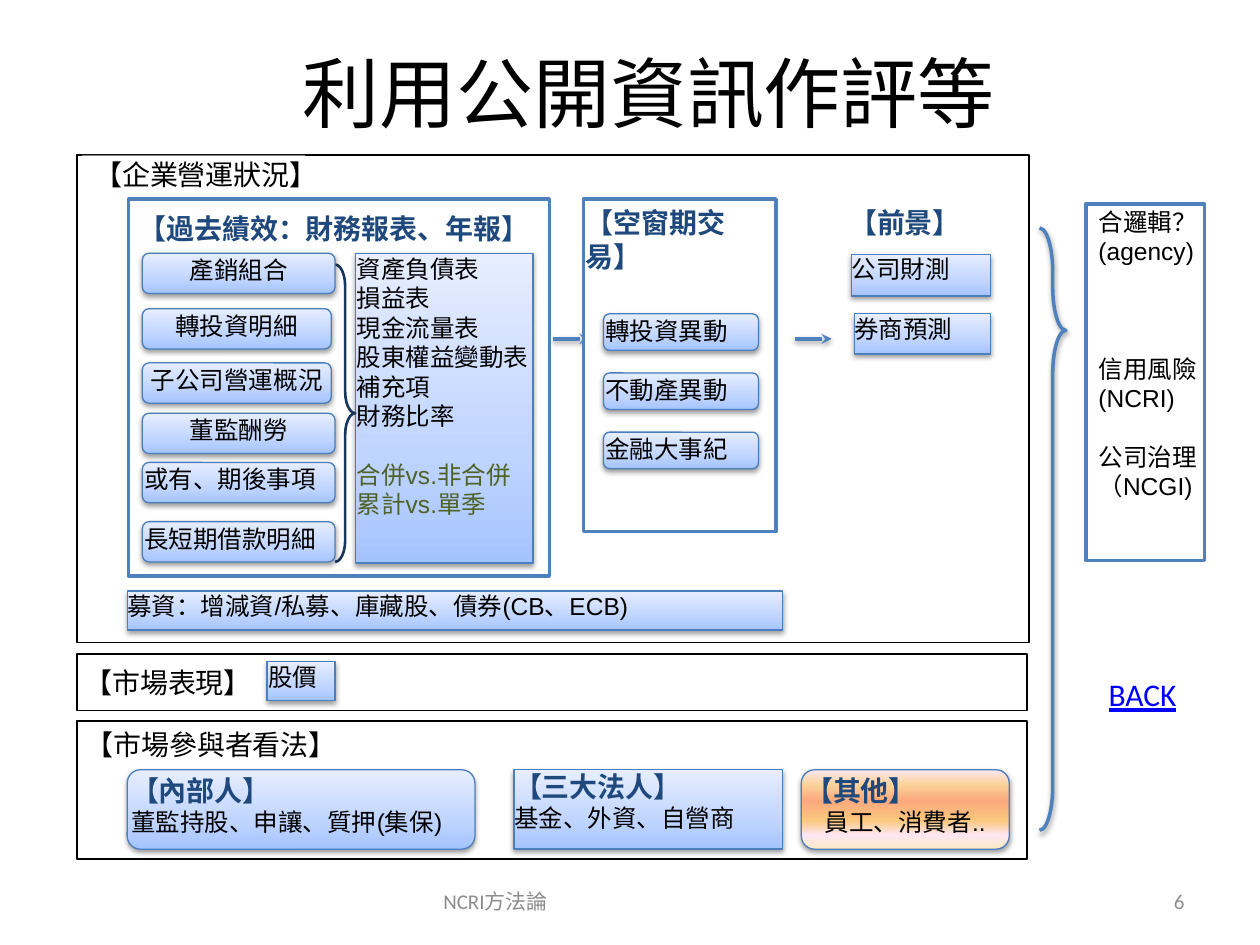
from dataclasses import dataclass

from lxml.etree import SubElement
from pptx import Presentation
from pptx.dml.color import RGBColor
from pptx.enum.shapes import MSO_CONNECTOR, MSO_SHAPE
from pptx.enum.text import MSO_ANCHOR, PP_ALIGN
from pptx.oxml.ns import qn
from pptx.util import Inches, Pt


@dataclass(frozen=True)
class Theme:
    """Colours, fonts and type sizes of the slide."""
    body_font: str = "Arial"
    heading_font: str = "Calibri"
    black: str = "000000"
    white: str = "FFFFFF"
    gray: str = "8C8C8C"
    navy: str = "1F497D"
    brace: str = "17375E"
    green: str = "4F6228"
    link: str = "0000FF"
    accent: str = "4F81BD"
    edge: str = "4B7EBC"
    blue_stops: tuple = ((0, "A4C4FF"), (35, "BFD4FF"), (100, "E6EEFF"))
    warm_stops: tuple = ((0, "FBEAC7"), (18, "FEE7F2"), (36, "FAC77D"),
                         (61, "FBA97D"), (82, "FBD49C"), (100, "FEE7F2"))
    title: int = 44
    back: int = 18
    label: int = 16
    body: int = 14
    footer: int = 12
    blank: float = 16.8


THEME = Theme()


@dataclass(frozen=True)
class Box:
    """A rectangle in inches."""
    left: float
    top: float
    width: float
    height: float

    def inside(self, left, top, width, height):
        """Return a box offset from this one's corner."""
        return Box(self.left + left, self.top + top, width, height)

    def lengths(self):
        """Return the four lengths for python-pptx."""
        return [Inches(v) for v in (self.left, self.top, self.width, self.height)]


@dataclass(frozen=True)
class Line:
    """One paragraph of text and its format."""
    text: str
    size: float = THEME.body
    color: str = THEME.black
    bold: bool = False
    align: PP_ALIGN = PP_ALIGN.LEFT
    before: float = 0
    font: str = THEME.body_font
    underline: bool = False


def heading(text):
    """Return a bold navy heading line."""
    return Line(text, THEME.label, THEME.navy, True)


def write(shape, lines, inset=0.0, anchor=MSO_ANCHOR.TOP, wrap=True):
    """Fill a shape with formatted paragraphs."""
    frame = shape.text_frame
    frame.word_wrap = wrap
    frame.vertical_anchor = anchor
    frame.margin_left = frame.margin_right = Inches(inset)
    frame.margin_top = frame.margin_bottom = Inches(inset / 2)
    for index, line in enumerate(lines):
        para = frame.add_paragraph() if index else frame.paragraphs[0]
        para.text = line.text
        para.alignment = line.align
        if line.before:
            para.space_before = Pt(line.before)
        font = para.font
        font.name, font.size, font.bold = line.font, Pt(line.size), line.bold
        font.color.rgb = RGBColor.from_string(line.color)
        if line.underline:
            font.underline = True


def add_text(page, box, lines, inset=0.01, anchor=MSO_ANCHOR.TOP):
    """Add a plain text box."""
    write(page.shapes.add_textbox(*box.lengths()), lines, inset, anchor)


def set_line(shape, color, width):
    """Set the outline of a shape or connector."""
    shape.line.color.rgb = RGBColor.from_string(color)
    shape.line.width = Pt(width)


def cast_shadow(effects):
    """Put a soft downward shadow in an effect list."""
    shadow = SubElement(effects, qn("a:outerShdw"), blurRad=str(Pt(3.1)),
                        dist=str(Pt(1.6)), dir="5400000", rotWithShape="0")
    color = SubElement(shadow, qn("a:srgbClr"), val=THEME.black)
    SubElement(color, qn("a:alpha"), val="38000")


def add_frame(page, box, color=THEME.black, width=1, alpha=None):
    """Add a white rectangle, outlined when a colour is given."""
    shape = page.shapes.add_shape(MSO_SHAPE.RECTANGLE, *box.lengths())
    shape.shadow.inherit = False
    shape.fill.solid()
    shape.fill.fore_color.rgb = RGBColor.from_string(THEME.white)
    if alpha:
        fill = shape._element.spPr.find(qn("a:solidFill"))
        SubElement(fill[0], qn("a:alpha"), val=str(alpha * 1000))
    if color:
        set_line(shape, color, width)
    else:
        shape.line.fill.background()
    return shape


def add_card(page, box, lines, rounded=False, inset=0.0, stops=THEME.blue_stops):
    """Add a shaded card with a shadow and text."""
    kind = MSO_SHAPE.ROUNDED_RECTANGLE if rounded else MSO_SHAPE.RECTANGLE
    shape = page.shapes.add_shape(kind, *box.lengths())
    shape.shadow.inherit = False
    shape.fill.gradient()
    shape.fill.gradient_angle = 90
    properties = shape._element.spPr
    stop_list = properties.find(qn("a:gradFill")).find(qn("a:gsLst"))
    stop_list.clear()
    for position, color in stops:
        stop = SubElement(stop_list, qn("a:gs"), pos=str(position * 1000))
        SubElement(stop, qn("a:srgbClr"), val=color)
    set_line(shape, THEME.edge, 0.75)
    cast_shadow(properties.find(qn("a:effectLst")))
    write(shape, lines, inset)


def add_brace(page, box, color, width, adjustments, shadow=False):
    """Add a right brace."""
    shape = page.shapes.add_shape(MSO_SHAPE.RIGHT_BRACE, *box.lengths())
    shape.shadow.inherit = False
    shape.fill.background()
    set_line(shape, color, width)
    for index, value in enumerate(adjustments):
        shape.adjustments[index] = value
    if shadow:
        cast_shadow(shape._element.spPr.find(qn("a:effectLst")))


def add_arrow(page, left, top, length):
    """Add a level arrow pointing right."""
    arrow = page.shapes.add_connector(
        MSO_CONNECTOR.STRAIGHT, Inches(left), Inches(top), Inches(left + length), Inches(top))
    set_line(arrow, THEME.accent, 2)
    SubElement(arrow.line._get_or_add_ln(), qn("a:tailEnd"), type="stealth")
    cast_shadow(SubElement(arrow._element.spPr, qn("a:effectLst")))


def place_title(page, box):
    """Move and format the title placeholder."""
    title = page.shapes.title
    title.left, title.top, title.width, title.height = box.lengths()
    line = Line("利用公開資訊作評等", THEME.title, align=PP_ALIGN.CENTER, font=THEME.heading_font)
    write(title, [line], 0.1, MSO_ANCHOR.MIDDLE)


def place_market(page, box):
    """Place the market performance strip."""
    add_frame(page, box, alpha=50)
    add_card(page, box.inside(1.51, 0.06, 0.54, 0.31), [Line("股價")], inset=0.01)
    add_text(page, box.inside(0.05, 0.09, 1.45, 0.38), [Line("【市場表現】", THEME.label)])


def place_participants(page, box):
    """Place the market participants' views."""
    add_frame(page, box, alpha=50)
    cards = [(5.75, 1.65, "【其他】", Line("員工、消費者..", align=PP_ALIGN.CENTER), True, THEME.warm_stops),
             (3.47, 2.13, "【三大法人】", Line("基金、外資、自營商"), False, THEME.blue_stops),
             (0.4, 2.76, "【內部人】", Line("董監持股、申讓、質押(集保)"), True, THEME.blue_stops)]
    for left, width, name, detail, rounded, stops in cards:
        add_card(page, box.inside(left, 0.39, width, 0.63), [heading(name), detail], rounded, stops=stops)
    add_text(page, box.inside(0.06, 0.05, 2.07, 0.34), [Line("【市場參與者看法】", THEME.label)])


def place_results(page, box):
    """Place the rating results beside the brace."""
    panel = add_frame(page, box, THEME.accent, 2)
    lines = [Line("合邏輯？"), Line("(agency)"), Line("信用風險", before=3 * THEME.blank),
             Line("(NCRI)"), Line("公司治理", before=THEME.blank), Line("（NCGI)")]
    write(panel, lines, 0.1, wrap=False)
    panel.text_frame.margin_top = Inches(0.02)


def place_gap_period(page, box):
    """Place the gap period transactions."""
    add_frame(page, box, THEME.accent, 2)
    add_text(page, box.inside(0.01, 0.05, 1.53, 0.41), [heading("【空窗期交易】")])
    for row, name in enumerate(("轉投資異動", "不動產異動", "金融大事紀")):
        add_card(page, box.inside(0.16, 0.91 + 0.47 * row, 1.23, 0.29), [Line(name)], True)


def place_outlook(page, box):
    """Place the outlook column."""
    add_card(page, box.inside(0.03, 0.39, 1.1, 0.33), [Line("公司財測")])
    add_card(page, box.inside(0.05, 0.86, 1.08, 0.32), [Line("券商預測")])
    add_text(page, box.inside(0, 0, 1.05, 0.41), [heading("【前景】")])


def place_past(page, box):
    """Place past performance from statements and annual reports."""
    add_frame(page, box, THEME.accent, 2)
    statements = [Line(name) for name in
                  ("資產負債表", "損益表", "現金流量表", "股東權益變動表", "補充項", "財務比率")]
    statements += [Line("合併vs.非合併", color=THEME.green, before=THEME.blank),
                   Line("累計vs.單季", color=THEME.green)]
    add_card(page, box.inside(1.8, 0.43, 1.41, 2.46), statements, inset=0.01)
    add_brace(page, box.inside(1.64, 0.52, 0.16, 2.36), THEME.brace, 1.5, (1.07, 0.5))
    add_text(page, box.inside(0.07, 0.09, 3.23, 0.41), [heading("【過去績效：財務報表、年報】")])
    center, left = PP_ALIGN.CENTER, PP_ALIGN.LEFT
    notes = [("產銷組合", 0.43, 1.53, center), ("轉投資明細", 0.87, 1.5, center),
             ("子公司營運概況", 1.3, 1.5, center), ("董監酬勞", 1.7, 1.53, center),
             ("或有、期後事項", 2.09, 1.53, left), ("長短期借款明細", 2.56, 1.53, left)]
    for name, top, width, align in notes:
        add_card(page, box.inside(0.11, top, width, 0.32), [Line(name, align=align)], True)


def place_operations(page, box):
    """Place the company operations region."""
    add_frame(page, box, alpha=50)
    label = add_frame(page, box.inside(0.04, 0, 1.77, 0.31), None, alpha=50)
    write(label, [Line("【企業營運狀況】", THEME.label)], 0.1, MSO_ANCHOR.MIDDLE, False)
    for left in (3.78, 5.7):
        add_arrow(page, box.left + left, box.top + 1.46, 0.29)
    place_gap_period(page, box.inside(4.02, 0.35, 1.53, 2.64))
    add_card(page, box.inside(0.4, 3.46, 5.2, 0.31), [Line("募資：增減資/私募、庫藏股、債券(CB、ECB)")])
    place_outlook(page, box.inside(6.12, 0.4, 1.13, 1.18))
    place_past(page, box.inside(0.41, 0.35, 3.34, 2.99))


def place_footer(page, box):
    """Place the footer text and page number."""
    style = dict(size=THEME.footer, color=THEME.gray, font=THEME.heading_font)
    add_text(page, box.inside(0, 0, 3.17, 0.4), [Line("NCRI方法論", **style)], 0.1, MSO_ANCHOR.MIDDLE)
    number = Line("6", align=PP_ALIGN.RIGHT, **style)
    add_text(page, box.inside(3.75, 0, 2.33, 0.4), [number], 0.1, MSO_ANCHOR.MIDDLE)


def main():
    """Build and save the deck."""
    deck = Presentation()
    deck.slide_width, deck.slide_height = Inches(10), Inches(7.5)
    page = deck.slides.add_slide(deck.slide_layouts[5])
    place_footer(page, Box(3.42, 6.95, 6.08, 0.4))
    place_title(page, Box(0.5, 0.3, 9.3, 0.85))
    place_market(page, Box(0.61, 5.19, 7.54, 0.45))
    place_participants(page, Box(0.61, 5.72, 7.54, 1.1))
    place_results(page, Box(8.62, 1.62, 0.94, 2.83))
    add_brace(page, Box(8.25, 1.81, 0.21, 4.78), THEME.accent, 2, (1.64, 0.17), shadow=True)
    place_operations(page, Box(0.61, 1.23, 7.56, 3.87))
    back = Line("BACK", THEME.back, THEME.link, font=THEME.heading_font, underline=True)
    add_text(page, Box(8.7, 5.31, 0.94, 0.4), [back], 0.1)
    deck.save("out.pptx")


if __name__ == "__main__":
    main()
